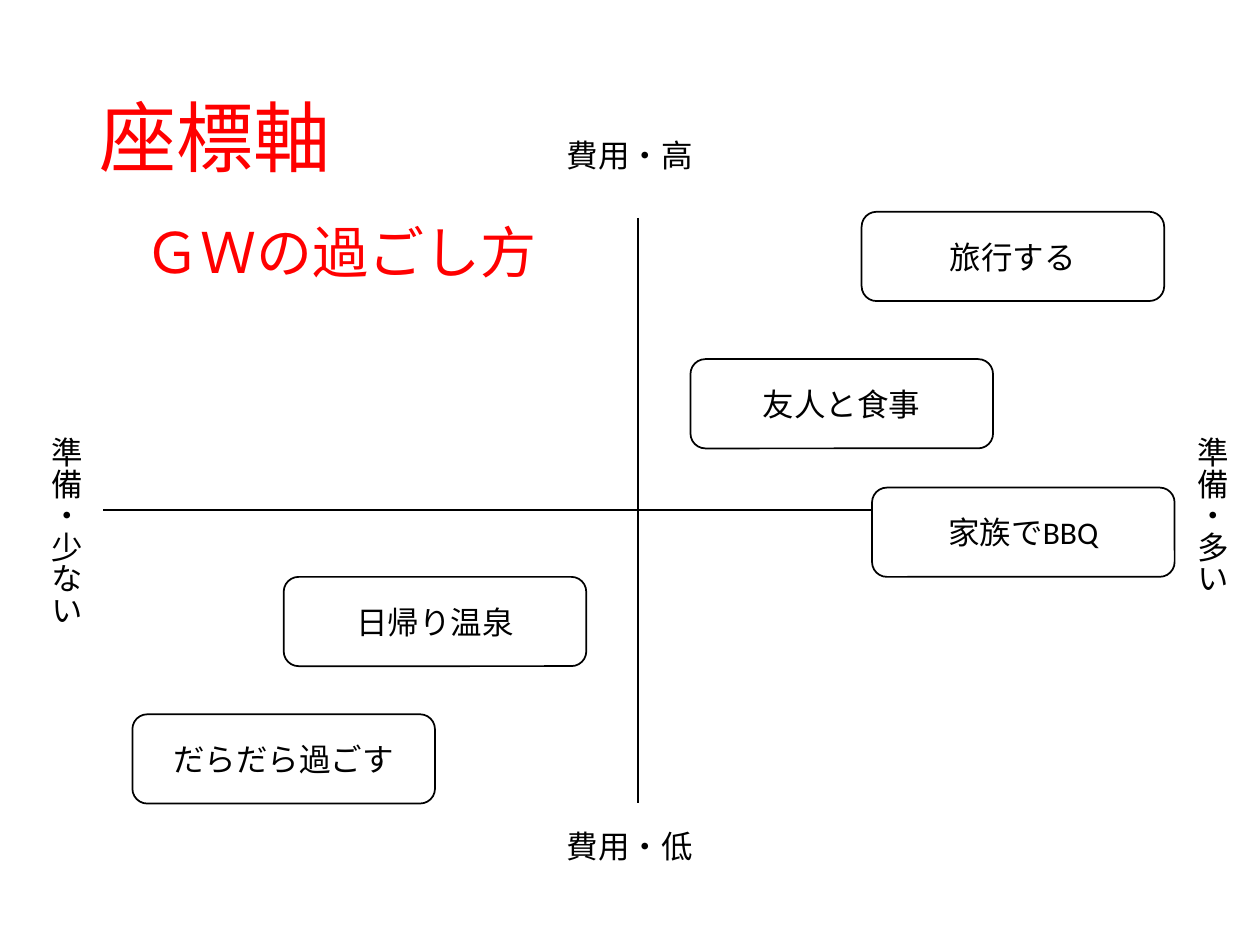
from lxml import etree
from pptx import Presentation
from pptx.dml.color import RGBColor
from pptx.enum.shapes import MSO_SHAPE
from pptx.enum.text import MSO_ANCHOR, PP_ALIGN
from pptx.oxml.ns import qn
from pptx.util import Cm, Pt

ROUNDED = MSO_SHAPE.ROUNDED_RECTANGLE
MIDDLE, TOP = MSO_ANCHOR.MIDDLE, MSO_ANCHOR.TOP
LEFT, CENTER = PP_ALIGN.LEFT, PP_ALIGN.CENTER
RED = RGBColor(0xFF, 0, 0)
BLACK = RGBColor(0, 0, 0)
WHITE = RGBColor(0xFF, 0xFF, 0xFF)
FONT = "Calibri"

TITLE_BOX = (1.75, 1.02, 21.9, 3.68)
SUBTITLE_BOX = (2.67, 4.27, 8.81, 1.63)
CHART_BOX = (2.08, 4.39, 21.56, 11.79)
CARD_SIZE = (6.1, 1.8)
CARDS = [
    ("だらだら過ごす", 0.59, 10.01),
    ("日帰り温泉", 3.64, 7.24),
    ("旅行する", 15.29, -0.12),
    ("家族でBBQ", 15.5, 5.44),
    ("友人と食事", 11.84, 2.85),
]


def lengths(box):
    return [Cm(value) for value in box]


def write(frame, text, size=18, color=BLACK, align=LEFT, anchor=TOP,
          spacing=None, vertical=False):
    frame.word_wrap = True
    frame.vertical_anchor = anchor
    if vertical:
        frame._txBody.bodyPr.set("vert", "eaVert")
    paragraph = frame.paragraphs[0]
    paragraph.alignment = align
    paragraph.line_spacing = spacing
    run = paragraph.add_run()
    run.text = text
    run.font.size = Pt(size)
    run.font.name = FONT
    run.font.color.rgb = color


def add_label(slide, box, text, **style):
    label = slide.shapes.add_textbox(*lengths(box))
    write(label.text_frame, text, **style)


def add_heading(slide, title_box, subtitle_box):
    title = slide.shapes.title
    title.left, title.top, title.width, title.height = lengths(title_box)
    write(title.text_frame, "座標軸", size=44, color=RED, anchor=MIDDLE, spacing=0.9)
    add_label(slide, subtitle_box, "ＧＷの過ごし方", size=32, color=RED)


def set_borders(cell, visible):
    properties = cell._tc.get_or_add_tcPr()
    for position, side in enumerate(("lnL", "lnR", "lnT", "lnB")):
        border = etree.Element(qn(f"a:{side}"), w=str(Pt(1)))
        if side in visible:
            fill = etree.SubElement(border, qn("a:solidFill"))
            etree.SubElement(fill, qn("a:srgbClr"), val=str(BLACK))
        else:
            etree.SubElement(border, qn("a:noFill"))
        properties.insert(position, border)


def add_axes(slide, box):
    axes = slide.shapes.add_table(2, 2, *lengths(box)).table
    axes.first_row = axes.horz_banding = False
    for row in range(2):
        for column in range(2):
            cell = axes.cell(row, column)
            cell.fill.background()
            set_borders(cell, {("lnR", "lnL")[column], ("lnB", "lnT")[row]})


def add_axis_labels(slide, box):
    left, top, width, height = box
    middle_x = left + width / 2 - 1.68
    middle_y = top + 4.17
    add_label(slide, (middle_x, top - 1.77, 3.84, 1.02), "費用・高")
    add_label(slide, (middle_x, top + height + 0.36, 3.84, 1.02), "費用・低")
    add_label(slide, (left + width + 0.03, middle_y, 1.27, 4.34), "準備・多い", vertical=True)
    add_label(slide, (left - 1.5, middle_y, 1.27, 4.34), "準備・少ない", vertical=True)


def add_cards(slide, box):
    left, top = box[:2]
    for text, x, y in CARDS:
        card = slide.shapes.add_shape(ROUNDED, *lengths((left + x, top + y, *CARD_SIZE)))
        card.shadow.inherit = False
        card.fill.solid()
        card.fill.fore_color.rgb = WHITE
        card.line.color.rgb = BLACK
        card.line.width = Pt(1)
        write(card.text_frame, text, align=CENTER, anchor=MIDDLE)


def main():
    deck = Presentation()
    deck.slide_width, deck.slide_height = Cm(25.4), Cm(19.05)
    slide = deck.slides.add_slide(deck.slide_layouts.get_by_name("Title Only"))
    add_axes(slide, CHART_BOX)
    add_axis_labels(slide, CHART_BOX)
    add_cards(slide, CHART_BOX)
    add_heading(slide, TITLE_BOX, SUBTITLE_BOX)
    deck.save("out.pptx")


if __name__ == "__main__":
    main()
